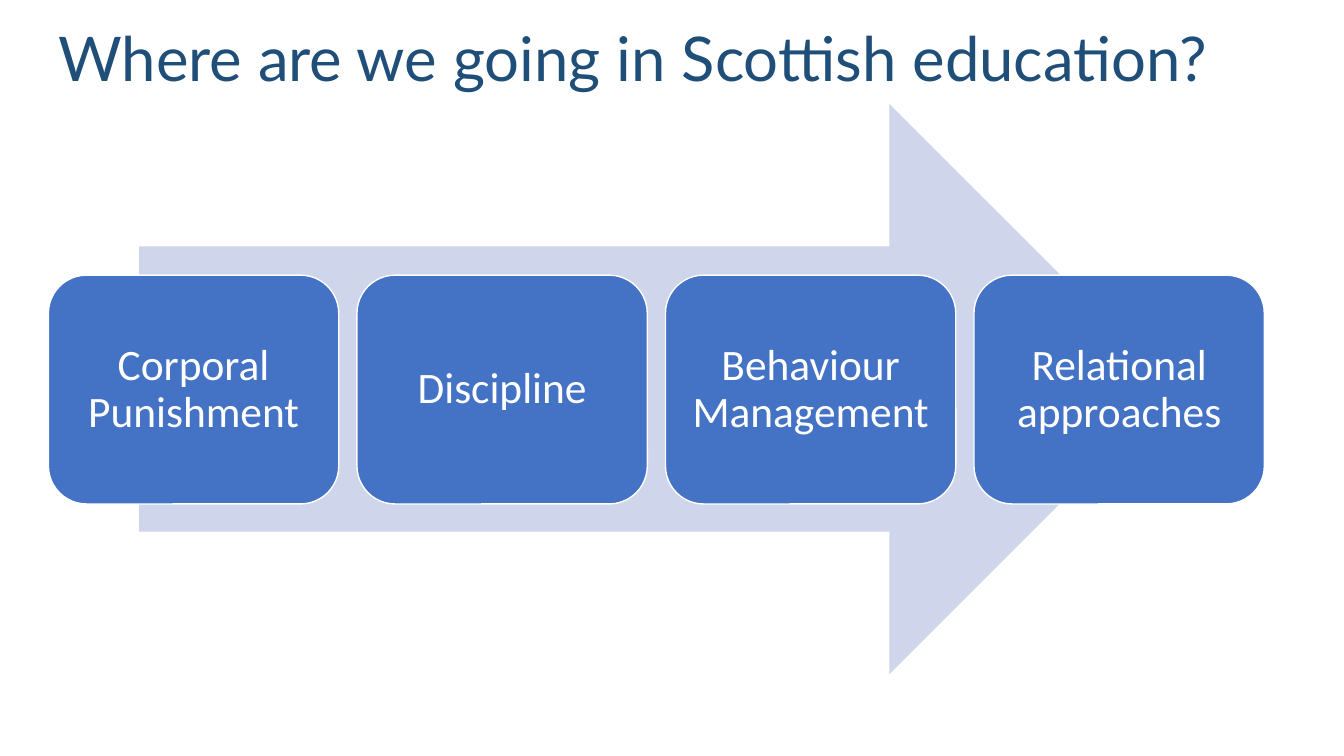
from pptx import Presentation
from pptx.dml.color import RGBColor
from pptx.enum.shapes import MSO_SHAPE as SHAPE
from pptx.enum.text import MSO_ANCHOR as ANCHOR, PP_ALIGN as ALIGN
from pptx.util import Inches, Pt

TITLE = "Where are we going in Scottish education?"
STAGES = ["Corporal Punishment", "Discipline", "Behaviour Management", "Relational approaches"]
COLORS = {"title": "1F4E79", "arrow": "CFD5EA", "stage": "4472C4", "white": "FFFFFF"}

LEFT, STAGE_TOP = 0.48, 2.73
STAGE_W, STAGE_H, STAGE_STEP = 2.88, 2.27, 3.06
INSET = 0.13


def rgb(name):
    return RGBColor.from_string(COLORS[name])


def add_block(slide, kind, box, fill):
    sp = slide.shapes.add_shape(kind, *map(Inches, box))
    sp.shadow.inherit = False
    sp.fill.solid()
    sp.fill.fore_color.rgb = rgb(fill)
    sp.line.fill.background()
    return sp


def write(tf, text, font, size, color, align):
    tf.word_wrap = True
    tf.vertical_anchor = ANCHOR.MIDDLE
    p = tf.paragraphs[0]
    p.alignment = align
    p.line_spacing = 0.9
    r = p.add_run()
    r.text = text
    r.font.name = font
    r.font.size = Pt(size)
    r.font.color.rgb = rgb(color)


def main():
    prs = Presentation()
    prs.slide_width, prs.slide_height = Inches(13.33), Inches(7.5)
    slide = prs.slides.add_slide(prs.slide_layouts[6])
    slide.background.fill.solid()
    slide.background.fill.fore_color.rgb = rgb("white")

    title = slide.shapes.add_textbox(*map(Inches, (LEFT, 0.18, 12.08, 0.86)))
    write(title.text_frame, TITLE, "Lato", 44, "title", ALIGN.LEFT)

    add_block(slide, SHAPE.RIGHT_ARROW, (1.38, 1.03, 10.27, 5.66), "arrow")

    for i, stage in enumerate(STAGES):
        box = (LEFT + i * STAGE_STEP, STAGE_TOP, STAGE_W, STAGE_H)
        sp = add_block(slide, SHAPE.ROUNDED_RECTANGLE, box, "stage")
        sp.line.color.rgb = rgb("white")
        sp.line.width = Pt(1)
        tf = sp.text_frame
        tf.margin_left = tf.margin_right = tf.margin_top = tf.margin_bottom = Inches(INSET)
        write(tf, stage, "Calibri", 31, "white", ALIGN.CENTER)

    prs.save("out.pptx")


if __name__ == "__main__":
    main()
